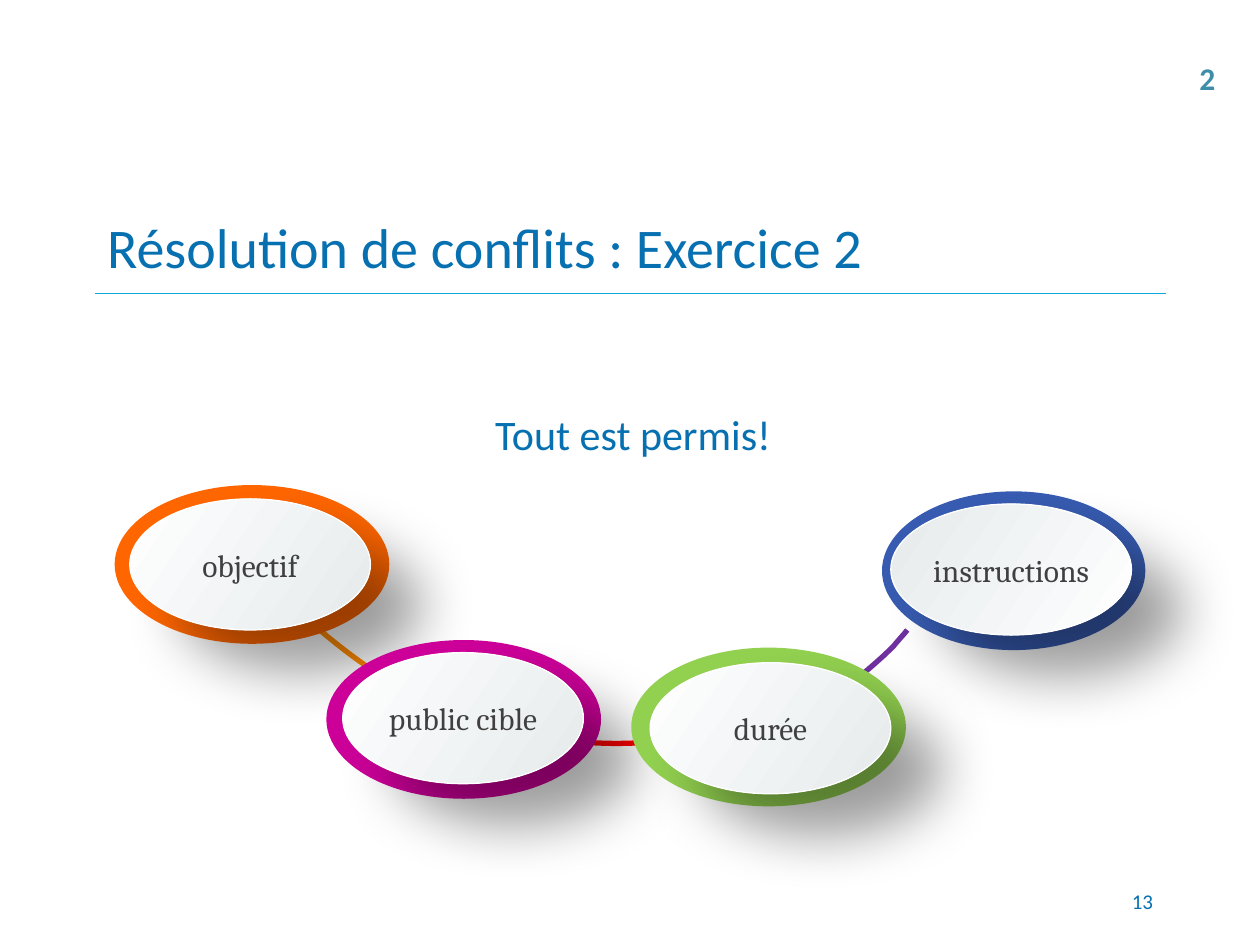
from lxml.etree import SubElement
from pptx import Presentation
from pptx.dml.color import RGBColor
from pptx.enum.shapes import MSO_CONNECTOR, MSO_SHAPE
from pptx.enum.text import MSO_ANCHOR as ANCHOR, MSO_AUTO_SIZE as AUTO, PP_ALIGN as ALIGN
from pptx.oxml import parse_xml
from pptx.oxml.ns import nsdecls, qn
from pptx.util import Inches, Pt

BLUE = RGBColor(0x07, 0x70, 0xB1)
SKY = RGBColor(0x0B, 0xA7, 0xDF)
TEAL = RGBColor(0x3E, 0x8E, 0xA9)
DARK = RGBColor(0x40, 0x40, 0x40)
WHITE = RGBColor(0xFF, 0xFF, 0xFF)
PALE = RGBColor(0xE6, 0xEA, 0xEB)
ORANGE = RGBColor(0xFF, 0x66, 0x00)
MAGENTA = RGBColor(0xCC, 0x00, 0x99)
GREEN = RGBColor(0x92, 0xD0, 0x50)
NAVY = RGBColor(0x37, 0x5B, 0xB0)
PURPLE = RGBColor(0x70, 0x30, 0xA0)
RED = RGBColor(0xFF, 0x00, 0x00)
AMBER = RGBColor(0xFF, 0x8A, 0x00)

TITLE = "Résolution de conflits : Exercice 2"
TITLE_BOX = (0.75, 1.58, 8.5, 0.75)
RING_H, FACE_W, FACE_H = 1.26, 1.91, 1.04

# label, ring colour, ring (left, top, width), face (left, top), gradient
INSTRUCTIONS = ("instructions", NAVY, (7, 3.9, 2.09), (7.07, 4), (PALE, WHITE))
OTHER_BUBBLES = [
    ("objectif", ORANGE, (0.91, 3.85, 2.18), (1.03, 3.96), (WHITE, PALE)),
    ("public cible", MAGENTA, (2.59, 5.08, 2.18), (2.72, 5.18), (WHITE, PALE)),
    ("durée", GREEN, (5.01, 5.14, 2.18), (5.16, 5.26), (WHITE, PALE)),
]

# colour, start point, Bézier segments (two control points and an end)
PURPLE_LINKS = [
    (PURPLE, (7.2, 5), [((7.17, 5.04), (7.13, 5.08), (7.09, 5.13)),
                        ((6.96, 5.26), (6.82, 5.37), (6.68, 5.49))]),
    (PURPLE, (6.68, 5.49), [((6.5, 5.61), (6.31, 5.71), (6.11, 5.79))]),
]
OTHER_LINKS = [
    (RED, (4.49, 5.88), [((4.71, 5.9), (4.93, 5.91), (5.14, 5.89)),
                         ((5.26, 5.89), (5.37, 5.87), (5.48, 5.86))]),
    (AMBER, (2.47, 4.94), [((2.68, 5.13), (2.94, 5.32), (3.22, 5.49))]),
]


def write(tf, text, size, font, color, align=ALIGN.LEFT, bold=False):
    p = tf.paragraphs[0]
    p.alignment = align
    r = p.add_run()
    r.text = text
    r.font.size, r.font.name, r.font.bold = Pt(size), font, bold
    r.font.color.rgb = color
    return p


def add_text(slide, box, *content, wrap=True, anchor=ANCHOR.TOP, grow=False, **style):
    tf = slide.shapes.add_textbox(*map(Inches, box)).text_frame
    tf.word_wrap = wrap
    tf.vertical_anchor = anchor
    tf.auto_size = AUTO.SHAPE_TO_FIT_TEXT if grow else AUTO.NONE
    return write(tf, *content, **style)


def add_rule(slide, left, right, y):
    rule = slide.shapes.add_connector(
        MSO_CONNECTOR.STRAIGHT, *map(Inches, (left, y, right, y)))
    rule.line.color.rgb = SKY
    rule.line.width = Pt(0.75)
    SubElement(rule._element.spPr, qn("a:effectLst"))
    rule._element.remove(rule._element.find(qn("p:style")))


def add_ellipse(slide, left, top, width, height):
    sp = slide.shapes.add_shape(MSO_SHAPE.OVAL, *map(Inches, (left, top, width, height)))
    sp.shadow.inherit = False
    return sp


def add_soft_shadow(sp):
    effects = sp._element.spPr.find(qn("a:effectLst"))
    effects.append(parse_xml(
        f'<a:outerShdw {nsdecls("a")} blurRad="{Pt(33)}" dist="{Pt(36.7)}" '
        f'dir="{39 * 60000}" algn="ctr" rotWithShape="0">'
        '<a:srgbClr val="000000"><a:alpha val="38000"/></a:srgbClr></a:outerShdw>'))


def add_bubble(slide, label, color, ring, face, gradient):
    sp = add_ellipse(slide, *ring, RING_H)
    sp.fill.solid()
    sp.fill.fore_color.rgb = color
    sp.line.fill.background()

    sp = add_ellipse(slide, *face, FACE_W, FACE_H)
    sp.fill.gradient()
    sp.fill.gradient_angle = 360 - 35
    for stop, shade in zip(sp.fill.gradient_stops, gradient):
        stop.color.rgb = shade
    sp.line.color.rgb = WHITE
    sp.line.width = Pt(0)
    add_soft_shadow(sp)
    tf = sp.text_frame
    tf.margin_left = tf.margin_right = tf.margin_top = tf.margin_bottom = 0
    tf.vertical_anchor = ANCHOR.MIDDLE
    write(tf, label, 18, "Cambria", DARK, ALIGN.CENTER)


def bezier(a, b, c, d, steps=10):
    """Points along a cubic curve, without its start."""
    for t in (i / steps for i in range(1, steps + 1)):
        u = 1 - t
        yield tuple(u**3 * p + 3 * u * u * t * q + 3 * u * t * t * r + t**3 * s
                    for p, q, r, s in zip(a, b, c, d))


def add_link(slide, color, start, segments):
    points = [start]
    for segment in segments:
        points += bezier(points[-1], *segment)
    # Freeform coordinates are whole numbers, so the curve is given in EMU.
    first, *rest = [(Inches(x), Inches(y)) for x, y in points]
    builder = slide.shapes.build_freeform(*first)
    builder.add_line_segments(rest, close=False)
    sp = builder.convert_to_shape()
    sp.shadow.inherit = False
    sp.fill.background()
    sp.line.color.rgb = color
    sp.line.width = Pt(3)


def main():
    prs = Presentation()
    prs.slide_width, prs.slide_height = Inches(10), Inches(7.5)
    slide = prs.slides.add_slide(prs.slide_layouts[5])

    left, top, width, height = TITLE_BOX
    add_rule(slide, left, left + width, top + height)

    title = slide.shapes.title
    title.left, title.top, title.width, title.height = map(Inches, TITLE_BOX)
    title.text_frame.vertical_anchor = ANCHOR.MIDDLE
    title.text_frame.auto_size = AUTO.NONE
    write(title.text_frame, TITLE, 32, "Calibri", BLUE)

    add_text(slide, (7.17, 6.95, 2.08, 0.4), "13", 12, "Calibri", BLUE,
             anchor=ANCHOR.MIDDLE, align=ALIGN.RIGHT)

    for link in PURPLE_LINKS:
        add_link(slide, *link)
    add_bubble(slide, *INSTRUCTIONS)
    for link in OTHER_LINKS:
        add_link(slide, *link)
    for bubble in OTHER_BUBBLES:
        add_bubble(slide, *bubble)

    p = add_text(slide, (2.59, 3.13, 4.87, 0.56), "Tout est permis!", 24, "Calibri", BLUE,
                 grow=True, align=ALIGN.CENTER)
    p.line_spacing = 1.15
    p.space_after = Pt(6)
    add_text(slide, (9.42, 0.42, 0.32, 0.4), "2", 18, "Calibri", TEAL,
             wrap=False, grow=True, bold=True)

    prs.save("out.pptx")


if __name__ == "__main__":
    main()
